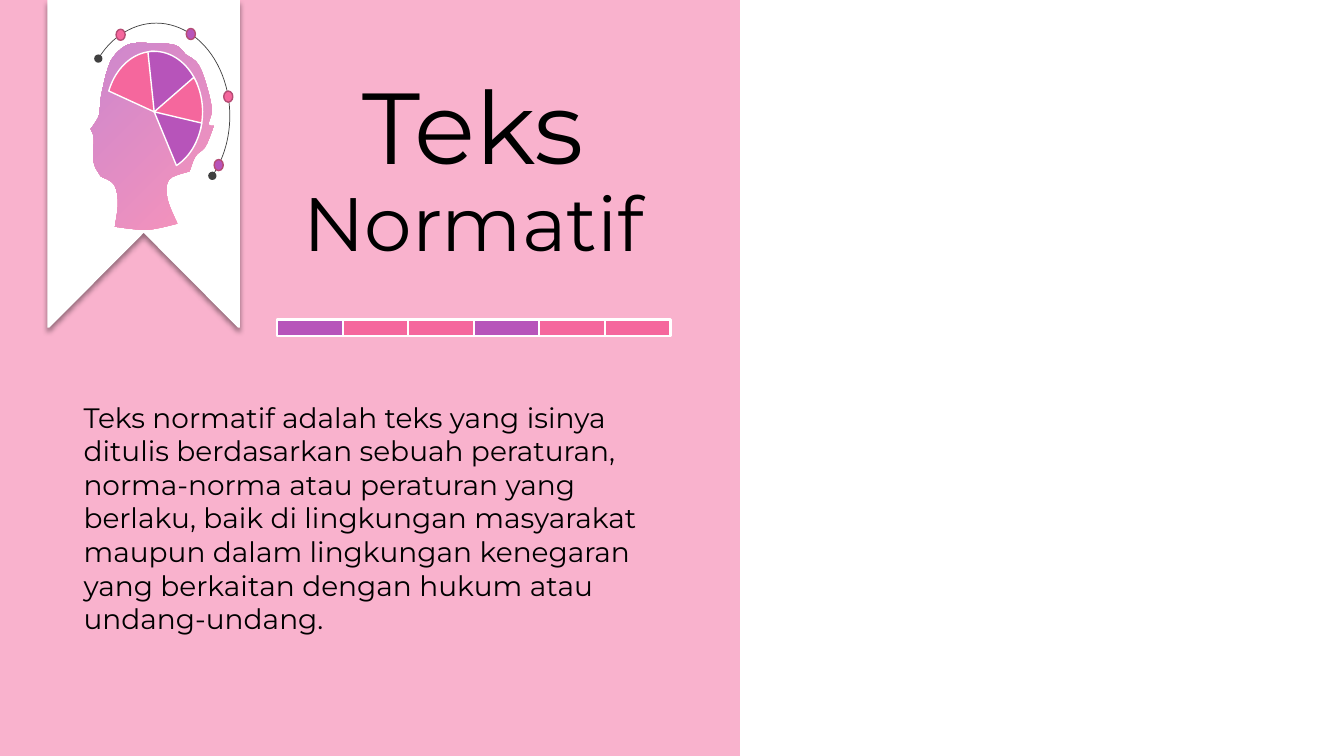
from math import cos, radians, sin

from lxml import etree
from pptx import Presentation
from pptx.dml.color import RGBColor
from pptx.enum.shapes import MSO_SHAPE
from pptx.enum.text import MSO_ANCHOR, PP_ALIGN
from pptx.oxml.ns import qn
from pptx.util import Inches, Pt

RECT, OVAL = MSO_SHAPE.RECTANGLE, MSO_SHAPE.OVAL
PIE, ARC = MSO_SHAPE.PIE, MSO_SHAPE.ARC
MIDDLE, CENTER = MSO_ANCHOR.MIDDLE, PP_ALIGN.CENTER
COLORS = {
    "pink": "F5679D",
    "purple": "B754BA",
    "rose": "B54C74",
    "white": "FFFFFF",
    "gray": "404040",
    "black": "000000",
}
ALTERNATING = ["pink", "purple"] * 2
HEAD_CURVES = {
    "brow": [(1.05, 0.74), (1, 0.97), (0.98, 1.15), (0.9, 1.28)],
    "mouth and chin": [(0.93, 1.37), (0.93, 1.61), (1, 1.75)],
    "throat": [(1.13, 1.83), (1.17, 2.01), (1.14, 2.25)],
    "base": [(1.46, 2.28), (1.76, 2.22)],
    "nape": [(1.66, 1.97), (1.68, 1.78), (1.88, 1.7)],
    "back hair": [(1.94, 1.55), (2.04, 1.45), (2.12, 1.25)],
    "crown": [(2.07, 1.23), (2.1, 1.08), (2.04, 0.82), (1.96, 0.63), (1.84, 0.54)],
    "top hair": [(1.74, 0.45), (1.52, 0.43), (1.28, 0.44), (1.12, 0.57), (1.05, 0.74)],
}


def ribbon_points(left, right, tip, notch, flat):
    middle = (left + right) / 2
    return [(left, 0), (right, 0), (right, tip), (right - flat, tip),
            (middle, notch), (left + flat, tip), (left, tip)]


def smooth(knots, steps=6):
    padded = [knots[0], *knots, knots[-1]]
    points = []
    for before, start, end, after in zip(padded, padded[1:], padded[2:], padded[3:]):
        for t in (i / steps for i in range(1, steps + 1)):
            points.append(tuple(
                b + t * (c - a + t * (2 * a - 5 * b + 4 * c - d
                                      + t * (3 * b - a - 3 * c + d))) / 2
                for a, b, c, d in zip(before, start, end, after)))
    return points


def head_points():
    points = [HEAD_CURVES["brow"][0]]
    for knots in HEAD_CURVES.values():
        points += smooth([points[-1], *knots] if knots[0] != points[-1] else knots)
    return points


def point_on_oval(box, angle):
    x, y, w, h = box
    return (x + w / 2 * (1 + cos(radians(angle))),
            y + h / 2 * (1 + sin(radians(angle))))


class SlideBuilder:
    font = "Montserrat"

    def __init__(self, prs):
        self.s = prs.slides.add_slide(prs.slide_layouts[6])

    def color(self, name):
        return RGBColor.from_string(COLORS[name])

    def style(self, sp, fill, line, width):
        sp.shadow.inherit = False
        if fill:
            sp.fill.solid()
            sp.fill.fore_color.rgb = self.color(fill)
        else:
            sp.fill.background()
        if line:
            sp.line.color.rgb = self.color(line)
            sp.line.width = Pt(width)
        else:
            sp.line.fill.background()
        return sp

    def shape(self, kind, box, fill=None, line=None, width=1, angles=()):
        sp = self.s.shapes.add_shape(kind, *map(Inches, box))
        for i, angle in enumerate(angles):
            sp.adjustments[i] = angle * 0.6
        return self.style(sp, fill, line, width)

    def outline(self, points, fill=None):
        pts = [(Inches(x), Inches(y)) for x, y in points]
        builder = self.s.shapes.build_freeform(*pts[0])
        builder.add_line_segments(pts[1:])
        return self.style(builder.convert_to_shape(), fill, None, 0)

    def alpha(self, sp, percent):
        for clr in sp._element.spPr.iter(qn("a:srgbClr")):
            etree.SubElement(clr, qn("a:alpha"), val=str(percent * 1000))

    def gradient(self, sp, names, angle):
        sp.fill.gradient()
        sp.fill.gradient_angle = angle
        for stop, name in zip(sp.fill.gradient_stops, names):
            stop.color.rgb = self.color(name)

    def drop_shadow(self, sp):
        effects = sp._element.spPr.find(qn("a:effectLst"))
        shadow = etree.SubElement(effects, qn("a:outerShdw"), blurRad=str(Pt(4)),
                                  dist=str(Pt(3)), dir="5400000", rotWithShape="0")
        clr = etree.SubElement(shadow, qn("a:srgbClr"), val=COLORS["black"])
        etree.SubElement(clr, qn("a:alpha"), val="40000")

    def oval_ends(self, sp):
        ln = sp._element.spPr.find(qn("a:ln"))
        for end in ("a:headEnd", "a:tailEnd"):
            etree.SubElement(ln, qn(end), type="oval")

    def text(self, box, runs):
        tf = self.s.shapes.add_textbox(*map(Inches, box)).text_frame
        tf.word_wrap = True
        p = tf.paragraphs[0]
        for words, size in runs:
            r = p.add_run()
            r.text = words
            r.font.name = self.font
            r.font.size = Pt(size)
            r.font.color.rgb = self.color("black")
        return tf


def add_title(b):
    tf = b.text((2.67, 0.37, 4.05, 2.69), [("Teks ", 72), ("Normatif", 54)])
    tf.vertical_anchor = MIDDLE
    p = tf.paragraphs[0]
    p.alignment = CENTER
    p.line_spacing = 0.9
    p.space_before = Pt(10)


def add_bar(b, left=2.75, top=3.17, width=0.65, height=0.16):
    for i, fill in enumerate(["purple", "pink", "pink"] * 2):
        b.shape(RECT, (left + width * i, top, width, height), fill, "white", 1.5)


def add_head(b):
    head = b.outline(head_points())
    b.gradient(head, ("pink", "purple"), 135)
    b.alpha(head, 70)

    brain = (1.05, 0.51, 0.96, 1.2)
    wedges = [(204.6, 270), (264, 326.5), (319, 22.3), (13.3, 67.5)]
    for fill, angles in zip(ALTERNATING, wedges):
        b.shape(PIE, brain, fill, "white", 1, angles)

    orbit = (0.82, 0.23, 1.46, 1.84)
    b.oval_ends(b.shape(ARC, orbit, None, "gray", 0.5, (224.7, 46.9)))
    dot_w, dot_h = 0.09, 0.11
    for fill, angle in zip(ALTERNATING, (241, 298, 348, 32)):
        x, y = point_on_oval(orbit, angle)
        b.shape(OVAL, (x - dot_w / 2, y - dot_h / 2, dot_w, dot_h), fill, "rose")


def main():
    prs = Presentation()
    prs.slide_width, prs.slide_height = Inches(13.33), Inches(7.5)
    b = SlideBuilder(prs)

    b.alpha(b.shape(RECT, (0, 0, 7.34, 7.5), "pink"), 50)
    add_title(b)
    ribbon = ribbon_points(left=0.47, right=2.38, tip=3.25, notch=2.31, flat=0.02)
    b.drop_shadow(b.outline(ribbon, "white"))
    add_bar(b)
    b.text((0.73, 3.92, 5.88, 2.79), [(
        "Teks normatif adalah teks yang isinya ditulis berdasarkan sebuah "
        "peraturan, norma-norma atau peraturan yang berlaku, baik di lingkungan "
        "masyarakat maupun dalam lingkungan kenegaran yang berkaitan dengan "
        "hukum atau undang-undang.", 20)])
    add_head(b)

    prs.save("out.pptx")


if __name__ == "__main__":
    main()
